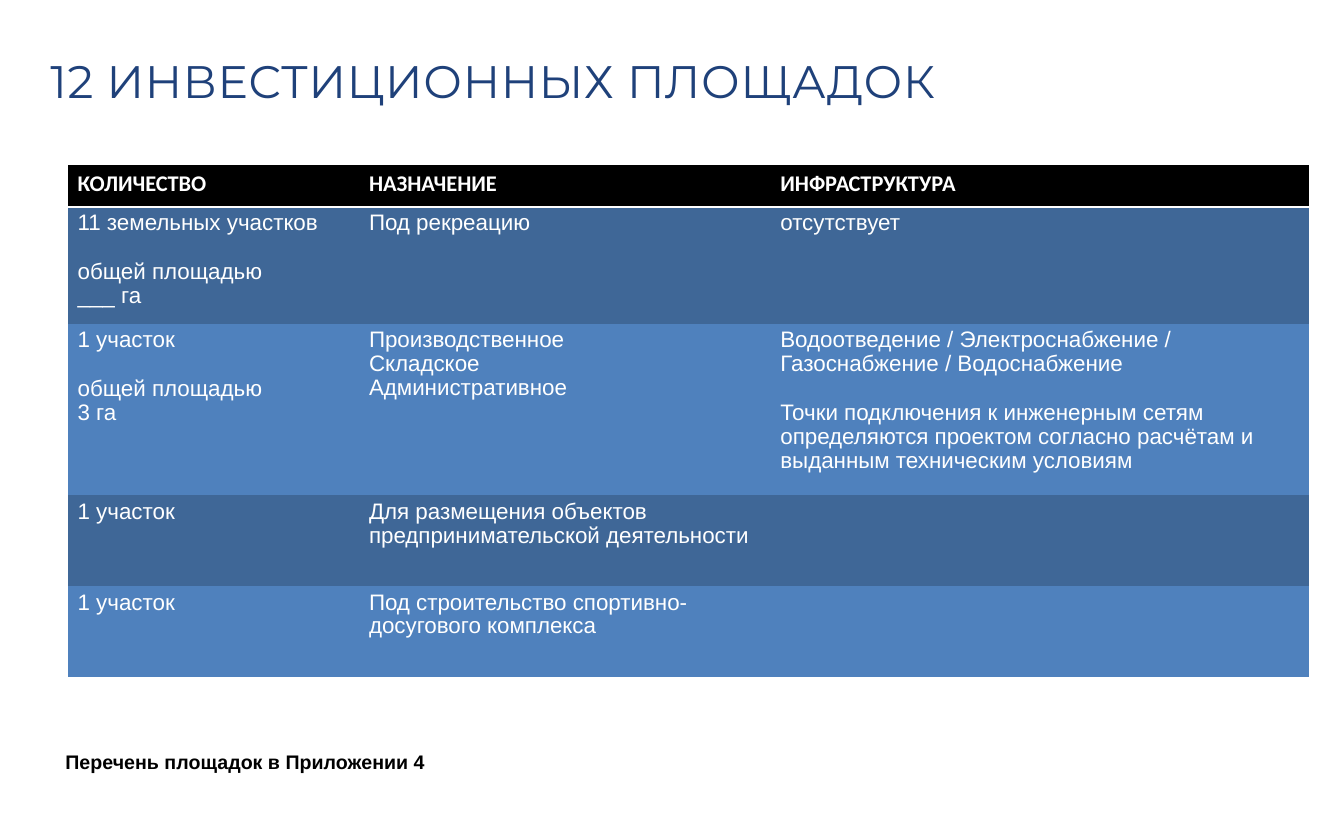
from dataclasses import dataclass

from lxml.etree import SubElement
from pptx import Presentation
from pptx.dml.color import RGBColor as Color
from pptx.enum.text import MSO_ANCHOR as Anchor, MSO_AUTO_SIZE as AutoSize, PP_ALIGN as Align
from pptx.oxml import parse_xml
from pptx.oxml.ns import nsdecls, qn
from pptx.util import Pt

EMU_PER_PX = 9144
PLAIN_TABLE = "{2D5ABB26-0587-4C30-8999-92F81FD0307C}"


def px(length):
    return length * EMU_PER_PX


@dataclass(frozen=True)
class Theme:
    navy: str = "1F417A"
    black: str = "000000"
    white: str = "FFFFFF"
    bands: tuple = ("3F6797", "4F81BD")
    title_font: str = "Montserrat"
    header_font: str = "Calibri"
    body_font: str = "Arial"
    title_size: float = 32.5
    table_size: float = 16
    note_size: float = 14
    line_spacing: float = 0.96
    block_gap: float = 17.7


class SlideBuilder:
    def __init__(self, deck, theme):
        self.theme = theme
        self.page = deck.slides.add_slide(deck.slide_layouts[5])

    def style(self, para, font, size, color, bold=False):
        para.alignment = Align.LEFT
        for span in para.runs:
            span.font.name = font
            span.font.size = Pt(size)
            span.font.bold = bold
            span.font.color.rgb = Color.from_string(color)

    def title(self, text, left, top, width, height):
        box = self.page.shapes.title
        box.left, box.top, box.width, box.height = map(px, (left, top, width, height))
        frame = box.text_frame
        frame.text = text
        frame.word_wrap = True
        frame.auto_size = AutoSize.SHAPE_TO_FIT_TEXT
        frame.vertical_anchor = Anchor.TOP
        frame.margin_left = frame.margin_right = frame.margin_bottom = 0
        frame.margin_top = px(1)
        para = frame.paragraphs[0]
        para.space_before = Pt(1.1)
        self.style(para, self.theme.title_font, self.theme.title_size, self.theme.navy)
        for span in para.runs:
            span.font._element.set("spc", "50")

    def note(self, text, left, top, width, height):
        box = self.page.shapes.add_textbox(*map(px, (left, top, width, height)))
        frame = box.text_frame
        frame.text = text
        frame.word_wrap = True
        frame.auto_size = AutoSize.SHAPE_TO_FIT_TEXT
        self.style(frame.paragraphs[0], self.theme.body_font, self.theme.note_size,
                   self.theme.black, bold=True)

    def table(self, header, rows, left, top, widths, heights):
        frame = self.page.shapes.add_table(
            len(heights), len(widths), px(left), px(top), px(sum(widths)), px(sum(heights)))
        table = frame.table
        table.horz_banding = False
        table._tbl.tblPr.find(qn("a:tableStyleId")).text = PLAIN_TABLE
        for column, width in zip(table.columns, widths):
            column.width = px(width)
        for row, height in zip(table.rows, heights):
            row.height = px(height)
        for index, text in enumerate(header):
            self.header_cell(table.cell(0, index), text)
        for row_index, row in enumerate(rows):
            band = self.theme.bands[row_index % len(self.theme.bands)]
            for index, blocks in enumerate(row):
                self.body_cell(table.cell(row_index + 1, index), blocks, band)

    def fill(self, cell, color):
        cell.fill.solid()
        cell.fill.fore_color.rgb = Color.from_string(color)

    def header_cell(self, cell, text):
        self.fill(cell, self.theme.black)
        cell.text_frame.text = text
        self.style(cell.text_frame.paragraphs[0], self.theme.header_font,
                   self.theme.table_size, self.theme.white, bold=True)
        border = parse_xml(f'<a:lnB {nsdecls("a")} w="{Pt(2)}"/>')
        solid = SubElement(border, qn("a:solidFill"))
        SubElement(solid, qn("a:srgbClr")).set("val", self.theme.white)
        cell._tc.get_or_add_tcPr().insert(0, border)

    def body_cell(self, cell, blocks, color):
        self.fill(cell, color)
        if not blocks:
            return
        frame = cell.text_frame
        frame.text = "\n".join(blocks)
        for para in frame.paragraphs:
            self.style(para, self.theme.body_font, self.theme.table_size, self.theme.white)
            para.line_spacing = self.theme.line_spacing
        last_line = -1
        for block in blocks[:-1]:
            last_line += len(block.split("\n"))
            frame.paragraphs[last_line].space_after = Pt(self.theme.block_gap)


def main():
    deck = Presentation()
    deck.slide_width, deck.slide_height = px(1333), px(828)
    slide = SlideBuilder(deck, Theme())
    slide.title("12 ИНВЕСТИЦИОННЫХ ПЛОЩАДОК", 50, 52, 1067, 56)
    slide.table(
        header=("КОЛИЧЕСТВО", "НАЗНАЧЕНИЕ", "ИНФРАСТРУКТУРА"),
        rows=(
            (("11 земельных участков", "общей площадью\n___ га"),
             ("Под рекреацию",),
             ("отсутствует",)),
            (("1 участок", "общей площадью\n3 га"),
             ("Производственное\nСкладское\nАдминистративное",),
             ("Водоотведение / Электроснабжение / Газоснабжение / Водоснабжение",
              "Точки подключения к инженерным сетям определяются проектом "
              "согласно расчётам и выданным техническим условиям")),
            (("1 участок",),
             ("Для размещения объектов предпринимательской деятельности",),
             ()),
            (("1 участок",),
             ("Под строительство спортивно-досугового комплекса",),
             ()),
        ),
        left=67, top=164,
        widths=(289, 408, 534),
        heights=(41, 116, 170, 90, 90),
    )
    slide.note("Перечень площадок в Приложении 4", 55, 739, 1224, 34)
    deck.save("out.pptx")


if __name__ == "__main__":
    main()
